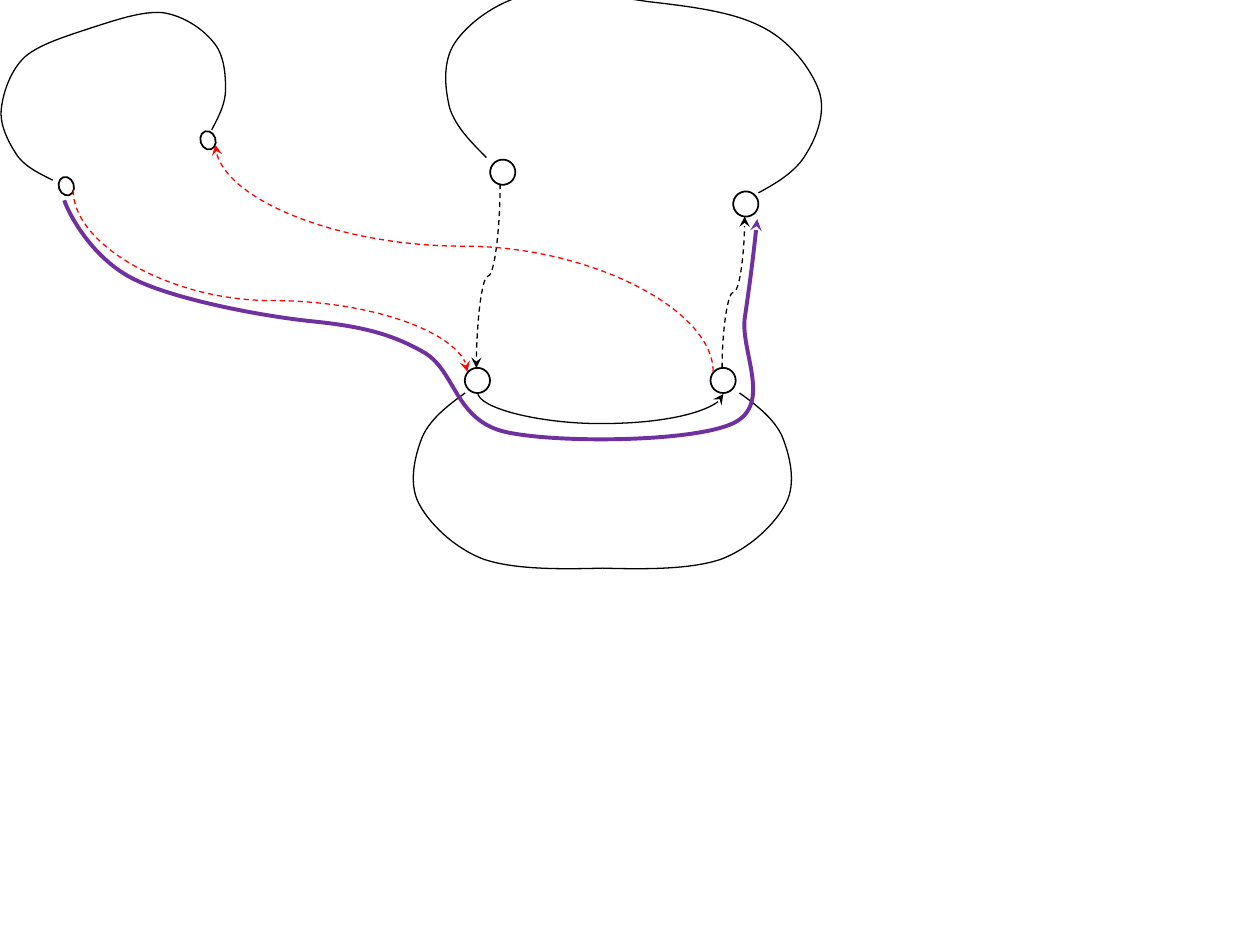
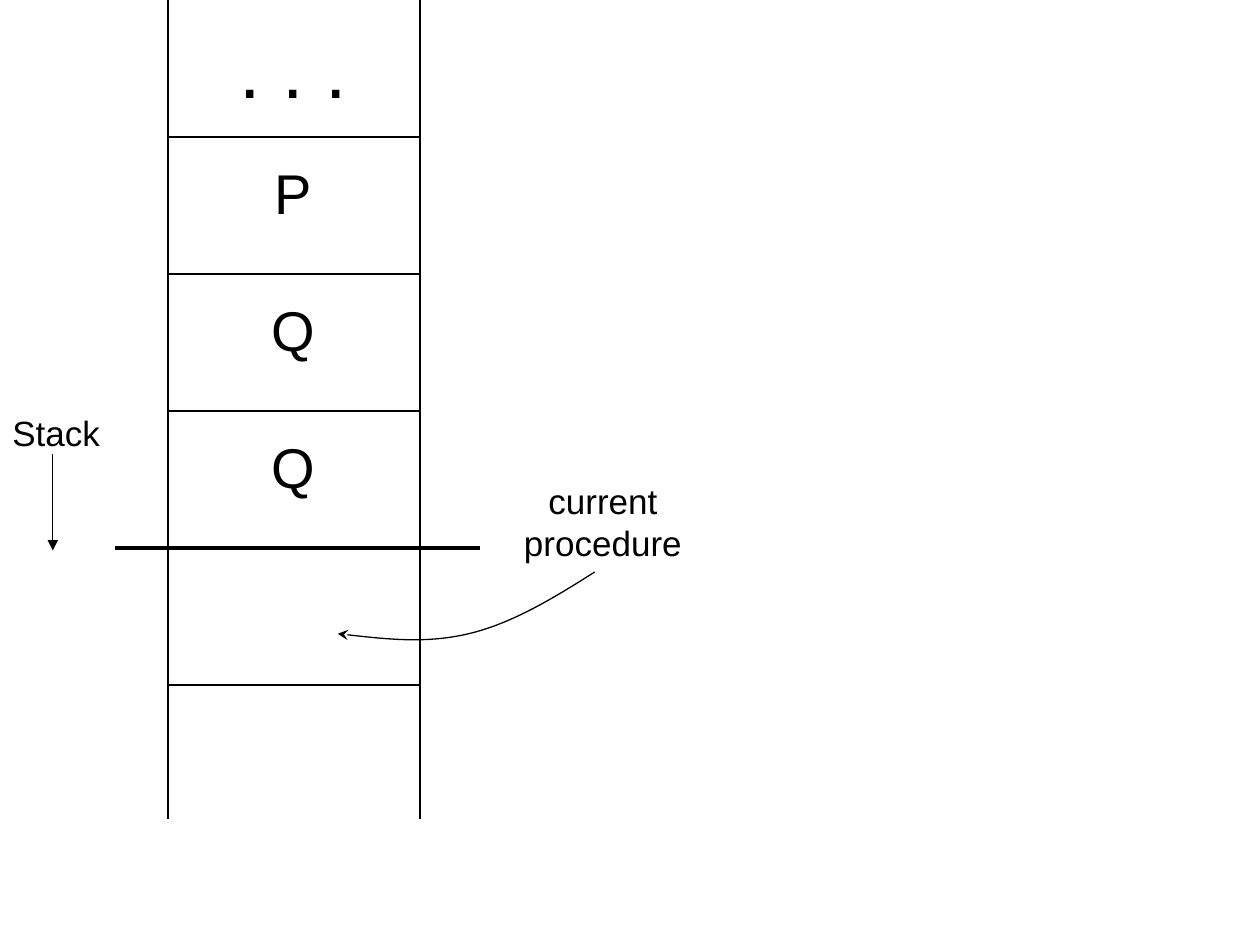
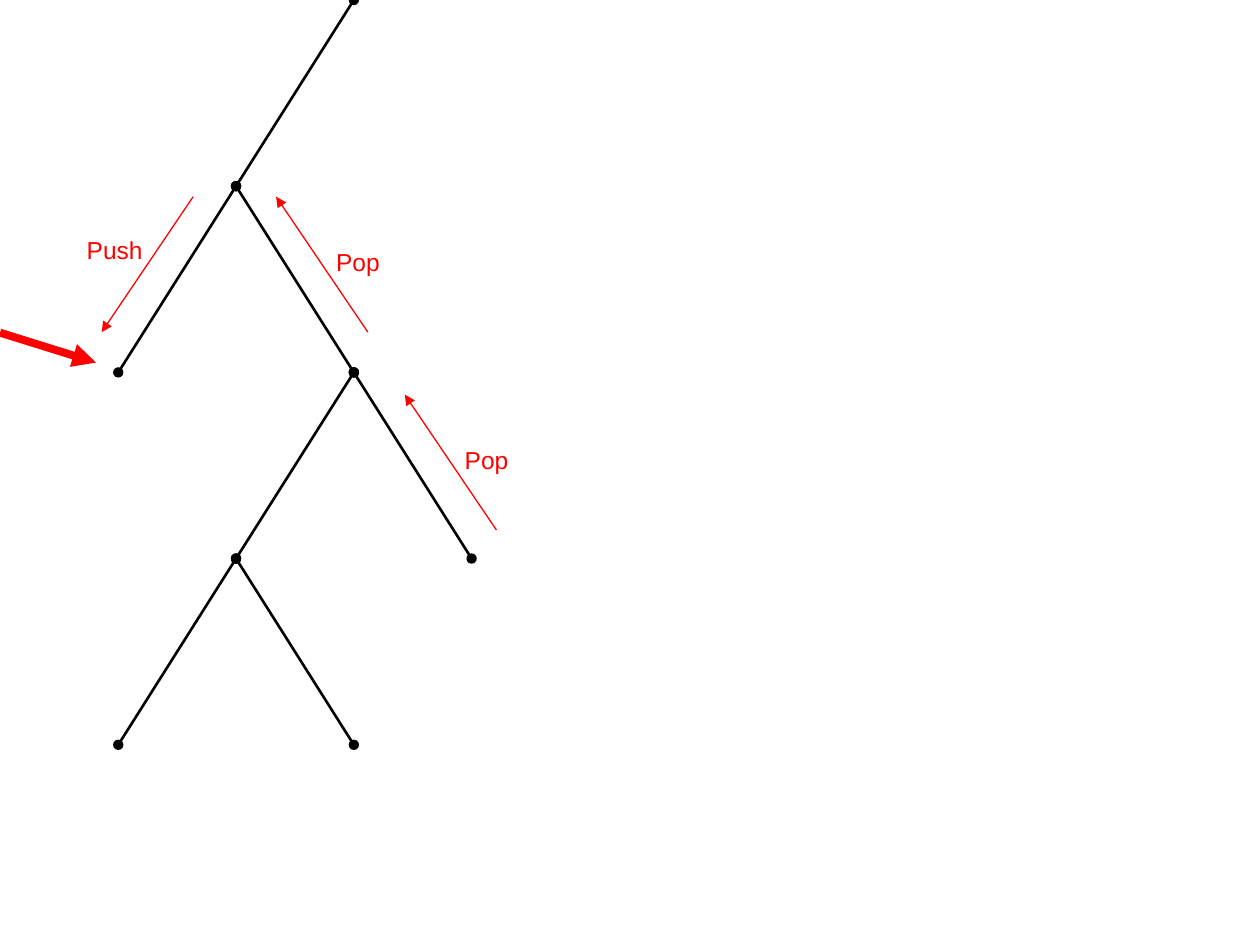
from lxml.etree import SubElement
from pptx import Presentation
from pptx.dml.color import RGBColor
from pptx.enum.dml import MSO_LINE
from pptx.enum.shapes import MSO_CONNECTOR as Connector, MSO_SHAPE as Preset
from pptx.enum.text import MSO_AUTO_SIZE as AutoSize, PP_ALIGN as Align
from pptx.oxml.ns import qn
from pptx.util import Pt

BLACK, WHITE, RED, PURPLE = "000000", "FFFFFF", "FF0000", "7030A0"
FONT = "Arial"
THIN, OUTLINE, BRANCH, THICK, HEAVY = 0.75, 1, 1.5, 2.25, 4.5
TEXT_BOX_FORMAT = {"word_wrap": True, "auto_size": AutoSize.SHAPE_TO_FIT_TEXT}


def paint(fill, color):
    fill.solid()
    fill.fore_color.rgb = RGBColor.from_string(color)


def stroke(shape, color, width, dashed=False, **ends):
    """Style a line without shadow; ends maps headEnd and tailEnd to arrow types."""
    paint(shape.line.fill, color)
    shape.line.width = Pt(width)
    if dashed:
        shape.line.dash_style = MSO_LINE.DASH
    properties = shape.element.spPr
    for end, arrow in ends.items():
        SubElement(properties.find(qn("a:ln")), qn(f"a:{end}"), type=arrow)
    SubElement(properties, qn("a:effectLst"))


presentation = Presentation()
presentation.slide_width, presentation.slide_height = Pt(720), Pt(540)
blank_layout = presentation.slide_layouts[6]
regions, stack, tree = [presentation.slides.add_slide(blank_layout) for _ in range(3)]

# Slide 1: boundary nodes of the three regions
nodes = [
    (280.1, 91.2, 14.4, 14.4, 7.4),
    (419, 109.4, 14.4, 14.4, 7.4),
    (33.6, 101, 8.6, 10.8, 342),
    (114.6, 74.8, 8.6, 10.8, 342),
    (406, 210.2, 14.4, 14.4, 180),
    (265.6, 210.2, 14.4, 14.4, 180),
]
for left, top, width, height, rotation in nodes:
    node = regions.shapes.add_shape(
        Preset.FLOWCHART_CONNECTOR, Pt(left), Pt(top), Pt(width), Pt(height))
    node.rotation = rotation
    paint(node.fill, WHITE)
    stroke(node, BLACK, OUTLINE)

# Smooth outlines: a start point, then two control points and an end point per piece
upper_left = [
    (277.9, 90), (269.3, 81.4), (260.6, 72.7), (257, 61.9),
    (254.2, 50.4), (252.7, 35.3), (259.9, 24.5),
    (267.1, 13.7), (283, 1.4), (301, -2.9),
    (319.7, -6.5), (344.2, -2.9), (368.6, 0.7)]
upper_right = [
    (433.4, 110.2), (444.2, 104.4), (455, 97.9), (460.8, 87.8),
    (466.6, 78.5), (472.3, 64.1), (468, 51.8),
    (463.7, 39.6), (451.4, 23), (434.9, 15.1),
    (418.3, 6.5), (393.8, 3.6), (368.6, 0.7)]
small_left = [
    (30.2, 103), (23, 99.4), (15.1, 95.8), (10.1, 89.3),
    (5.8, 82.8), (0, 72.7), (0.7, 63.4),
    (1.4, 54), (5.8, 40.3), (14.4, 32.4),
    (23, 25.2), (37.4, 20.9), (52.6, 15.8)]
small_right = [
    (121, 74.2), (125.3, 66.2), (128.9, 59), (128.9, 51.1),
    (128.9, 42.5), (128.2, 31), (121.7, 23.8),
    (115.9, 16.6), (104.4, 8.6), (92.2, 7.2),
    (80.6, 6.5), (66.2, 11.5), (52.6, 15.8)]
lower_right = [
    (422.6, 224.6), (432.7, 231.8), (442.8, 239.8), (447.1, 249.8),
    (451.4, 260.6), (455, 275.8), (449.3, 287.3),
    (443.5, 298.8), (429.1, 313.2), (411.8, 319.7),
    (394.6, 325.4), (369.4, 325.4), (344.2, 324.7)]
lower_axis = lower_right[-1][0]
lower_left = [(2 * lower_axis - x, y) for x, y in lower_right]
whole_route = [
    (36.7, 114.5), (39.6, 123.1), (53.3, 148.3), (77, 159.8),
    (100.8, 171.4), (149.8, 180.7), (177.8, 183.6),
    (206.6, 186.5), (223.9, 190.8), (242.6, 201.6),
    (260.6, 212.4), (259.9, 240.5), (289.4, 247),
    (319, 253.4), (396, 252.7), (419, 241.9),
    (441.4, 231.1), (423.4, 201.6), (425.5, 182.2),
    (428.4, 162.7), (430.6, 145.4), (432.7, 125.3)]
procedure_pointer = [
    (339.8, 326.9), (316.1, 342), (292.3, 356.4), (267.8, 362.2),
    (243.4, 367.9), (218.2, 365), (193, 362.2)]
stealth = {"tailEnd": "stealth"}
outlines = [upper_left, upper_right, small_left, small_right, lower_right, lower_left]
curves = [(regions, outline, BLACK, THIN, {}) for outline in outlines]
curves += [
    (regions, whole_route, PURPLE, THICK, stealth),
    (stack, procedure_pointer, BLACK, THIN, stealth),
]
for slide, points, color, width, ends in curves:
    start, *others = [(Pt(x), Pt(y)) for x, y in points]
    builder = slide.shapes.build_freeform(*start)
    builder.add_line_segments(others, close=False)
    curve = builder.convert_to_shape()
    curve.fill.background()
    outline_path = curve.element.xpath(".//a:path")[0]
    segments = outline_path.findall(qn("a:lnTo"))
    for index, segment in enumerate(segments):
        if index % 3 == 0:
            bezier = SubElement(outline_path, qn("a:cubicBezTo"))
        bezier.append(segment[0])
        outline_path.remove(segment)
    stroke(curve, color, width, **ends)

# Connections that leave and arrive vertically, with the place of their bend
connections = [
    ((41.8, 108.7), (267.1, 212.4), 0.608, RED, True),
    ((272.9, 224.2), (413.3, 225.2), 18, BLACK, False),
    ((285.8, 105.1), (272.2, 210.2), 0.5, BLACK, True),
    ((412.6, 210.2), (425.5, 123.8), 0.5, BLACK, True),
    ((407.5, 212.4), (123.1, 82.8), 0.553, RED, True),
]
for (x1, y1), (x2, y2), bend, color, dashed in connections:
    across, down = x2 - x1, y2 - y1
    turned = across * down > 0
    width, height = abs(down), abs(across)
    connection = regions.shapes.add_connector(Connector.CURVE, 0, 0, 0, 0)
    box = {"left": (x1 + x2 - width) / 2, "top": (y1 + y2 - height) / 2,
           "width": width, "height": height}
    for name, value in box.items():
        setattr(connection, name, Pt(value))
    transform = connection.element.spPr.find(qn("a:xfrm"))
    transform.set("rot", str((270 if turned else 90) * 60000))
    transform.set("flipH", str(int((down < 0) != turned)))
    transform.set("flipV", str(int((across > 0) != turned)))
    adjustments = connection.element.xpath(".//a:avLst")[0]
    SubElement(adjustments, qn("a:gd"), name="adj1", fmla=f"val {round(bend * 100000)}")
    stroke(connection, color, THIN, dashed, **stealth)

# Slide 2: stack frames
triangle = {"tailEnd": "triangle"}
frame_left, frame_right, frame_height = 96, 240, 78.3
stack_top = 4 * frame_height
lines = [(stack, (x, 0), (x, 468), BLACK, THIN, {}) for x in (frame_right, frame_left)]
lines += [(stack, (frame_left, row * frame_height), (frame_right, row * frame_height),
           BLACK, THIN, {}) for row in range(1, 6)]
lines += [
    (stack, (66, stack_top), (274.5, stack_top), BLACK, THICK, {}),
    (stack, (30.2, 259.2), (30.2, 314.6), BLACK, THIN, triangle),
]

# Slide 3: call tree, with nodes given as (column, row)
column_width, row_height, first_column = 67.3, 106.4, 67.6
branches = [
    ((1, 1), (0, 2)), ((2, 2), (1, 1)), ((2, 2), (1, 3)), ((3, 3), (2, 2)),
    ((1, 3), (0, 4)), ((2, 4), (1, 3)), ((2, 0), (1, 1)),
]
for branch in branches:
    start, end = [(first_column + column * column_width, row * row_height)
                  for column, row in branch]
    lines.append((tree, start, end, BLACK, BRANCH, {"headEnd": "oval", "tailEnd": "oval"}))
lines += [
    (tree, (0, 190.1), (54.9, 207.2), RED, HEAVY, triangle),
    (tree, (283.7, 302.9), (231.3, 225.5), RED, THIN, triangle),
    (tree, (210.2, 189.8), (157.8, 112.4), RED, THIN, triangle),
    (tree, (110.4, 112.4), (58.1, 189.8), RED, THIN, triangle),
]
for slide, start, end, color, width, ends in lines:
    line = slide.shapes.add_connector(
        Connector.STRAIGHT, *[Pt(value) for value in start + end])
    stroke(line, color, width, **ends)

# Labels of slides 2 and 3
labels = [
    (stack, text, (112.3, row * frame_height + 8.7, 110.9, height), size, BLACK, Align.CENTER)
    for row, (text, size, height) in enumerate(
        [(". . .", 44, 60.5), ("P", 32, 46), ("Q", 32, 46), ("Q", 32, 46)])]
labels += [
    (stack, "current procedure", (287.3, 270.7, 114.5, 55.4), 20, BLACK, Align.CENTER),
    (stack, "Stack", (0, 231.8, 64.8, 31.7), 20, BLACK, Align.LEFT),
]
labels += [(tree, text, (left, top, 60.5, 24.5), 14, RED, Align.LEFT)
           for text, left, top in [("Pop", 258.5, 250.6), ("Pop", 185, 137.5),
                                   ("Push", 42.5, 131)]]
for slide, text, box, size, color, alignment in labels:
    text_frame = slide.shapes.add_textbox(*[Pt(value) for value in box]).text_frame
    for name, value in TEXT_BOX_FORMAT.items():
        setattr(text_frame, name, value)
    paragraph = text_frame.paragraphs[0]
    paragraph.alignment = alignment
    run = paragraph.add_run()
    run.text = text
    for name, value in {"name": FONT, "size": Pt(size)}.items():
        setattr(run.font, name, value)
    paint(run.font.fill, color)

presentation.save("out.pptx")
